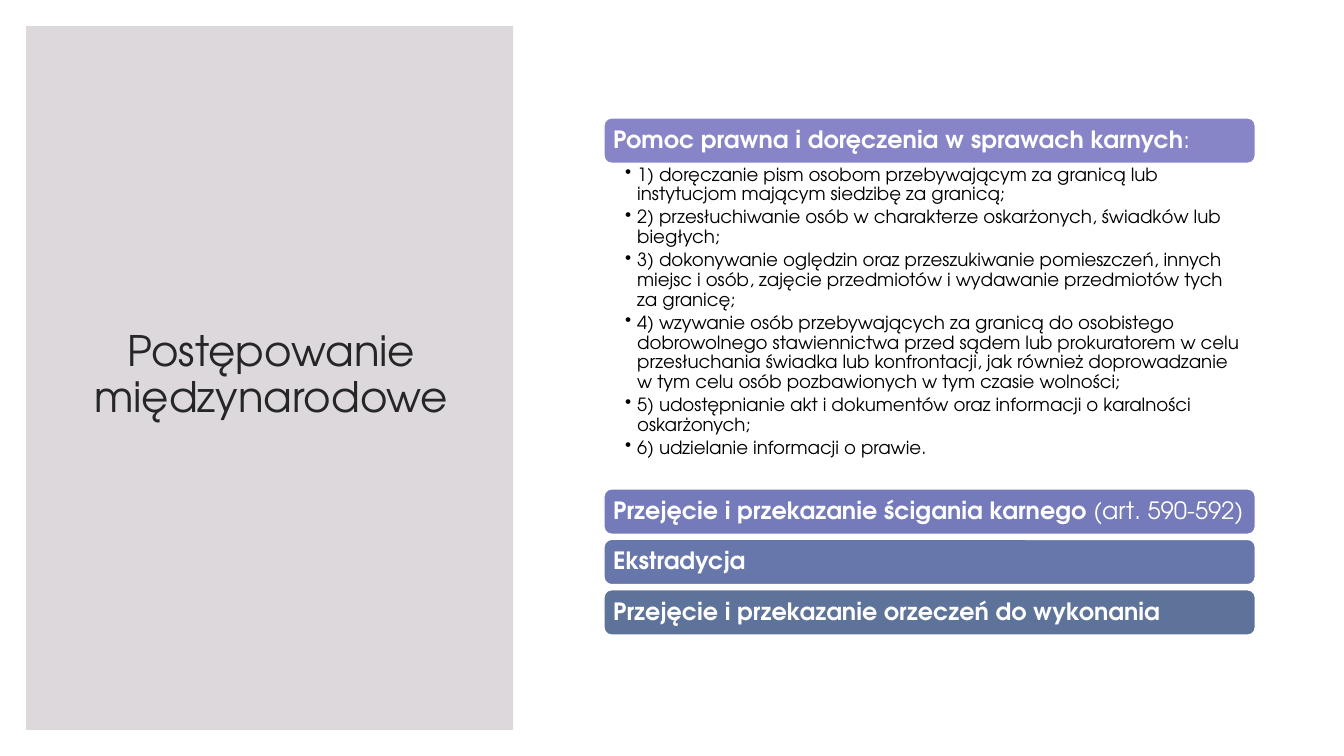
from lxml.etree import SubElement
from pptx import Presentation
from pptx.dml.color import RGBColor
from pptx.enum.shapes import MSO_SHAPE
from pptx.enum.text import MSO_ANCHOR, PP_ALIGN
from pptx.oxml.ns import qn
from pptx.util import Inches, Pt

COLORS = {
    "white": "FFFFFF", "panel": "DCD8DC", "title": "262626", "body": "000000",
    "aid": "8784C7", "transfer": "757BBA", "extradition": "6777AC", "rulings": "5D739A",
}
BAR_X, BAR_W, BAR_H, BAR_STEP = 44.94, 48.46, 6, 6.67
AID_Y, TRANSFER_Y = 15.6, 64.67

AID_ITEMS = [
    "1) doręczanie pism osobom przebywającym za granicą lub instytucjom mającym siedzibę za granicą;",
    "2) przesłuchiwanie osób w charakterze oskarżonych, świadków lub biegłych;",
    "3) dokonywanie oględzin oraz przeszukiwanie pomieszczeń, innych miejsc i osób, "
    "zajęcie przedmiotów i wydawanie przedmiotów tych za granicę;",
    "4) wzywanie osób przebywających za granicą do osobistego dobrowolnego stawiennictwa "
    "przed sądem lub prokuratorem w celu przesłuchania świadka lub konfrontacji, jak również "
    "doprowadzanie w tym celu osób pozbawionych w tym czasie wolności;",
    "5) udostępnianie akt i dokumentów oraz informacji o karalności oskarżonych;",
    "6) udzielanie informacji o prawie.",
]
LOWER_BARS = [
    ("transfer", "Przejęcie i przekazanie ścigania karnego ", "(art. 590-592)"),
    ("extradition", "Ekstradycja", ""),
    ("rulings", "Przejęcie i przekazanie orzeczeń do wykonania", ""),
]


def rgb(name):
    return RGBColor.from_string(COLORS[name])


def add_run(p, text, font="TeX Gyre Adventor", size=13, color="body", bold=False):
    r = p.add_run()
    r.text = text
    r.font.name = font
    r.font.size = Pt(size)
    r.font.bold = bold
    r.font.color.rgb = rgb(color)


class Deck:
    """Draws elements on a slide, with lengths in percent of its size."""

    def __init__(self, width=13.33, height=7.5):
        self.prs = Presentation()
        self.prs.slide_width = Inches(width)
        self.prs.slide_height = Inches(height)
        self.s = self.prs.slides.add_slide(self.prs.slide_layouts[6])

    def box(self, x, y, w, h):
        width, height = self.prs.slide_width, self.prs.slide_height
        return [round(v * size / 100) for v, size in
                ((x, width), (y, height), (w, width), (h, height))]

    def shape(self, kind, box, fill):
        sp = self.s.shapes.add_shape(kind, *self.box(*box))
        sp.shadow.inherit = False
        sp.fill.solid()
        sp.fill.fore_color.rgb = rgb(fill)
        sp.line.fill.background()
        return sp

    def frame(self, sp, insets, anchor=MSO_ANCHOR.MIDDLE):
        tf = sp.text_frame
        tf.word_wrap = True
        tf.vertical_anchor = anchor
        tf.margin_left, tf.margin_top, tf.margin_right, tf.margin_bottom = map(Inches, insets)
        return tf

    def paragraph(self, p, align=PP_ALIGN.LEFT, after=0):
        p.alignment = align
        p.line_spacing = 0.9
        p.space_after = Pt(after)
        return p

    def panel(self, *box):
        self.shape(MSO_SHAPE.RECTANGLE, box, "panel")

    def title(self, text, *box):
        sp = self.s.shapes.add_textbox(*self.box(*box))
        tf = self.frame(sp, (0.1, 0.05, 0.1, 0.05))
        p = self.paragraph(tf.paragraphs[0], PP_ALIGN.CENTER)
        add_run(p, text, size=30, color="title")

    def bar(self, y, fill, strong, light):
        sp = self.shape(MSO_SHAPE.ROUNDED_RECTANGLE, (BAR_X, y, BAR_W, BAR_H), fill)
        sp.line.color.rgb = rgb("white")
        sp.line.width = Pt(1)
        tf = self.frame(sp, (0.07, 0.07, 0.05, 0.07))
        p = self.paragraph(tf.paragraphs[0])
        add_run(p, strong, size=17, color="white", bold=True)
        if light:
            add_run(p, light, size=17, color="white")

    def bullets(self, items, *box):
        sp = self.s.shapes.add_textbox(*self.box(*box))
        tf = self.frame(sp, (0.21, 0.02, 0.13, 0.02), MSO_ANCHOR.TOP)
        for i, item in enumerate(items):
            p = tf.add_paragraph() if i else tf.paragraphs[0]
            self.paragraph(p, after=2.5)
            pPr = p._p.get_or_add_pPr()
            pPr.set("marL", str(Inches(0.12)))
            pPr.set("indent", str(-Inches(0.12)))
            SubElement(pPr, qn("a:buChar"), char="•")
            add_run(p, item)


def main():
    deck = Deck()
    deck.panel(1.95, 3.47, 36.23, 93.07)
    deck.title("Postępowanie międzynarodowe", 4.73, 8.13, 30.91, 83.2)
    deck.bar(AID_Y, "aid", "Pomoc prawna i doręczenia w sprawach karnych", ":")
    body_y = AID_Y + BAR_H
    deck.bullets(AID_ITEMS, BAR_X, body_y, BAR_W, TRANSFER_Y - body_y)
    for i, (fill, strong, light) in enumerate(LOWER_BARS):
        deck.bar(TRANSFER_Y + i * BAR_STEP, fill, strong, light)
    deck.prs.save("out.pptx")


if __name__ == "__main__":
    main()
